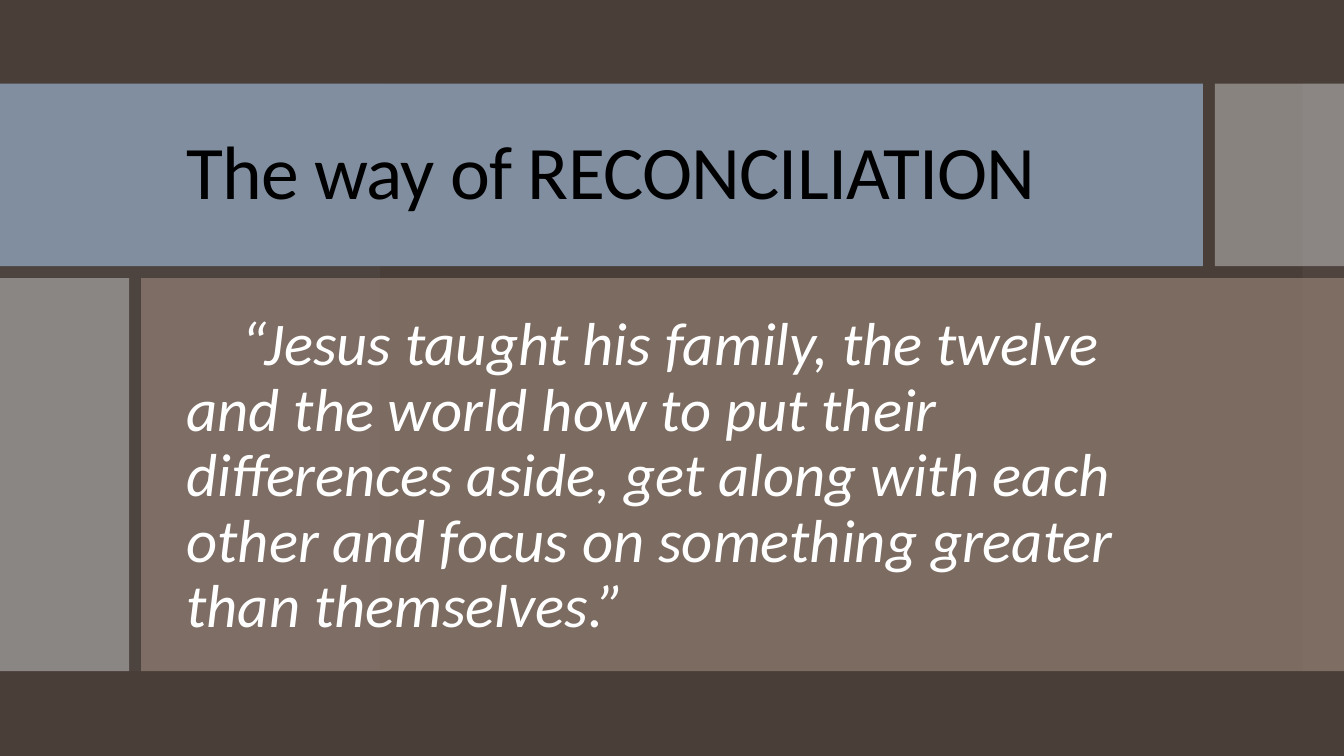
from pptx import Presentation
from pptx.dml.color import RGBColor
from pptx.enum.shapes import MSO_SHAPE
from pptx.enum.text import MSO_ANCHOR, MSO_AUTO_SIZE, PP_ALIGN
from pptx.oxml.ns import qn
from pptx.util import Inches, Pt
from lxml import etree

RECT = MSO_SHAPE.RECTANGLE
TOP, MIDDLE = MSO_ANCHOR.TOP, MSO_ANCHOR.MIDDLE
NO_AUTOFIT = MSO_AUTO_SIZE.NONE
LEFT = PP_ALIGN.LEFT

WIDTH, HEIGHT = 13.33, 7.5
BROWN, BLUE, GREY, TAUPE = "4A3F38", "818E9F", "C8C8C8", "9D897D"
BAND_TOP, BAND_BOTTOM = 0.83, 6.66
TITLE_BOTTOM, GAP = 2.64, 0.12
TITLE_RIGHT, SIDE_WIDTH = 11.93, 1.28
BODY_TOP, BODY_LEFT = TITLE_BOTTOM + GAP, SIDE_WIDTH + GAP
EDGE_LEFT = 12.92


def set_color(color, value):
    color.rgb = RGBColor.from_string(value)


def add_panel(slide, left, top, right, bottom, color, opacity=100):
    sp = slide.shapes.add_shape(RECT, Inches(left), Inches(top),
                                Inches(right - left), Inches(bottom - top))
    sp.shadow.inherit = False
    sp.line.fill.background()
    sp.fill.solid()
    set_color(sp.fill.fore_color, color)
    if opacity < 100:
        clr = sp.fill._xPr.find(qn("a:solidFill"))[0]
        etree.SubElement(clr, qn("a:alpha"), val=str(opacity * 1000))


def fill_placeholder(slide, sp, box, text, color, frame_format, font_format):
    sp.left, sp.top, sp.width, sp.height = [Inches(v) for v in box]
    tf = sp.text_frame
    for name, value in frame_format.items():
        setattr(tf, name, value)
    p = tf.paragraphs[0]
    p.alignment, p.line_spacing, p.space_before = LEFT, 0.9, Pt(0)
    r = p.add_run()
    r.text = text
    for name, value in font_format.items():
        setattr(r.font, name, value)
    set_color(r.font.color, color)
    # Bring the text in front of the panels
    slide.shapes._spTree.append(sp._element)
    return p


def main():
    prs = Presentation()
    prs.slide_width, prs.slide_height = Inches(WIDTH), Inches(HEIGHT)
    slide = prs.slides.add_slide(prs.slide_layouts[1])

    # Background and the veiled strips at both edges
    slide.background.fill.solid()
    set_color(slide.background.fill.fore_color, BROWN)
    add_panel(slide, EDGE_LEFT, BAND_TOP, WIDTH, BAND_BOTTOM, BLUE, 40)
    add_panel(slide, 0, BAND_TOP, 3.77, BAND_BOTTOM, BLUE)
    add_panel(slide, EDGE_LEFT, BAND_TOP, WIDTH, BAND_BOTTOM, GREY, 50)
    add_panel(slide, 0, 0, WIDTH, HEIGHT, BROWN, 93)

    # Title row and body row
    add_panel(slide, 0, BAND_TOP, TITLE_RIGHT, TITLE_BOTTOM, BLUE)
    add_panel(slide, TITLE_RIGHT + GAP, BAND_TOP, WIDTH, TITLE_BOTTOM, GREY, 50)
    add_panel(slide, 0, BODY_TOP, SIDE_WIDTH, BAND_BOTTOM, GREY, 50)
    add_panel(slide, BODY_LEFT, BODY_TOP, WIDTH, BAND_BOTTOM, TAUPE, 60)

    # Title
    p = fill_placeholder(
        slide, slide.shapes.title, (1.75, 1.19, 9.82, 1.09),
        "The way of RECONCILIATION", "000000",
        {"vertical_anchor": MIDDLE, "auto_size": NO_AUTOFIT, "word_wrap": True},
        {"name": "Calibri", "size": Pt(54)})
    p.runs[0].font._element.set("spc", "-60")

    # Quotation with a first-line indent and no bullet
    p = fill_placeholder(
        slide, slide.placeholders[1], (1.75, 3.11, 9.82, 3.55),
        "“Jesus taught his family, the twelve and the world how to put their "
        "differences aside, get along with each other and focus on something "
        "greater than themselves.”", "FFFFFF",
        {"vertical_anchor": TOP, "auto_size": NO_AUTOFIT, "word_wrap": True,
         "margin_top": Inches(0)},
        {"name": "Calibri", "size": Pt(43.3), "italic": True})
    pPr = p._p.get_or_add_pPr()
    pPr.set("marL", "0")
    pPr.set("indent", str(Inches(0.55)))
    etree.SubElement(pPr, qn("a:buNone"))

    prs.save("out.pptx")


if __name__ == "__main__":
    main()
